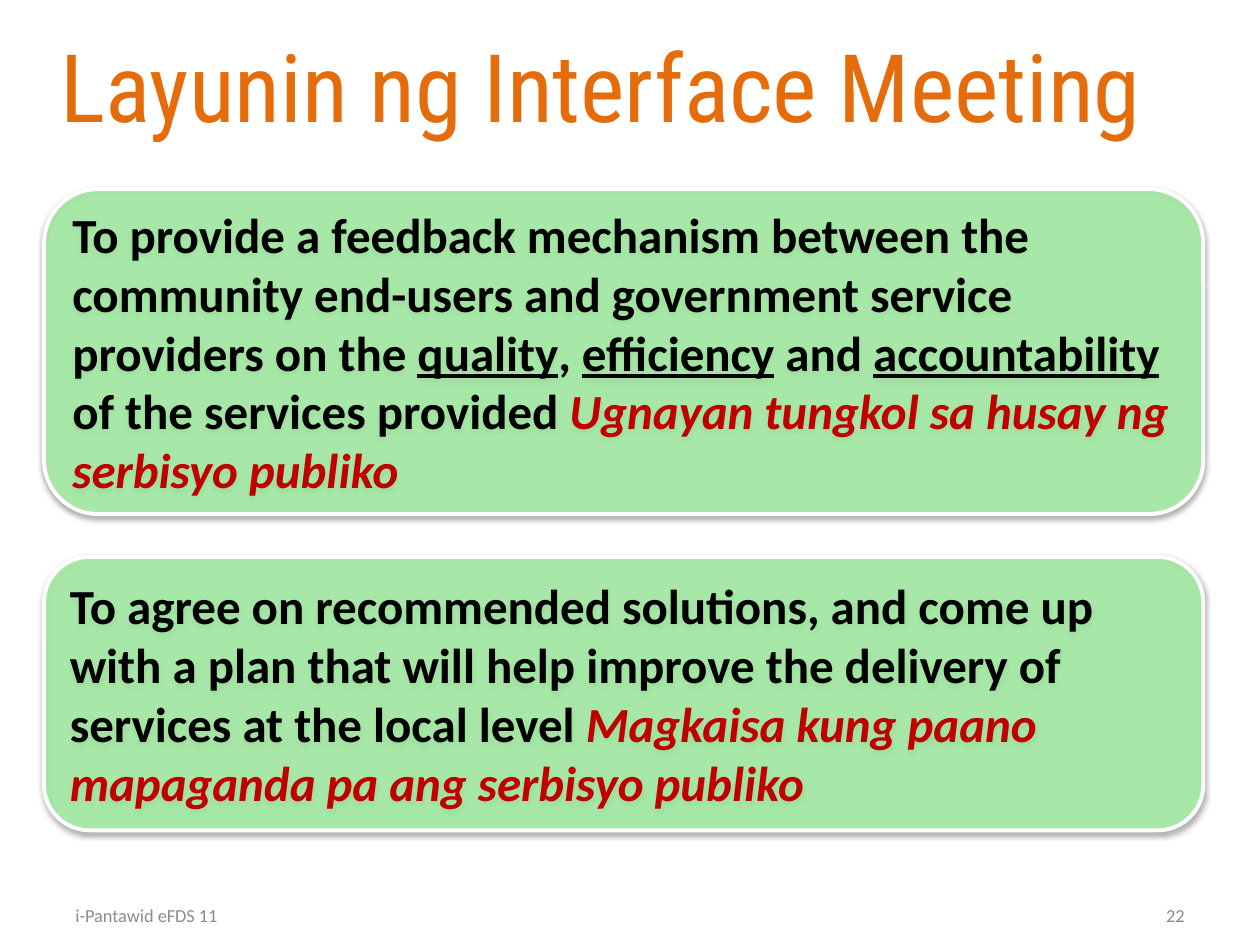
import pptx
import pptx.dml.color
import pptx.enum.shapes
import pptx.enum.text
import pptx.oxml
import pptx.oxml.ns
import pptx.util
from pptx.util import Inches

TITLE = "Layunin ng Interface Meeting"
GOALS = [
    (1.5, 2.58, [
        ("To provide a feedback mechanism between the community end-users "
         "and government service providers on the ", "plain"),
        ("quality", "key"),
        (", ", "plain"),
        ("efficiency", "key"),
        (" and ", "plain"),
        ("accountability", "key"),
        (" of the services provided ", "plain"),
        ("Ugnayan tungkol sa husay ng serbisyo publiko", "local"),
    ]),
    (4.42, 2.17, [
        ("To agree on recommended solutions, and come up with a plan that will "
         "help improve the delivery of services at the local level ", "plain"),
        ("Magkaisa kung paano mapaganda pa ang serbisyo publiko", "local"),
    ]),
]
FOOTERS = [(7.17, "22", "RIGHT"), (0.5, "i-Pantawid eFDS 11", "LEFT")]

BODY = {"name": "Calibri", "size": 28, "bold": True, "color": "000000"}
THEME = {
    "title": {"name": "Roboto Condensed", "size": 54, "color": "E46C0A"},
    "plain": BODY,
    "key": {**BODY, "underline": True},
    "local": {**BODY, "italic": True, "color": "C00000"},
    "footer": {"name": "Calibri", "size": 10.5, "color": "8C8C8C"},
    "box": "99FF99",
    "box_alpha": 63,
    "edge": "FFFFFF",
    "edge_width": 2.25,
    "title_edge": 1.45,
    "shadow": {"color": "000000", "alpha": 38, "blur": 3.1, "dist": 1.6},
}
NS = pptx.oxml.ns.nsdecls("a")
ANCHOR = pptx.enum.text.MSO_ANCHOR
ALIGN = pptx.enum.text.PP_ALIGN


def rgb(value):
    return pptx.dml.color.RGBColor.from_string(value)


def add_run(p, text, style):
    r = p.add_run()
    r.text = text
    for key, value in THEME[style].items():
        if key == "color":
            r.font.color.rgb = rgb(value)
        else:
            setattr(r.font, key, pptx.util.Pt(value) if key == "size" else value)
    return r


def add_text(s, box, text, style, align="LEFT", **frame):
    tf = s.shapes.add_textbox(*map(Inches, box)).text_frame
    for key, value in frame.items():
        setattr(tf, key, value)
    p = tf.paragraphs[0]
    p.alignment = ALIGN[align]
    return add_run(p, text, style)


def add_goal(s, top, height, runs):
    sp = s.shapes.add_shape(
        pptx.enum.shapes.MSO_SHAPE.ROUNDED_RECTANGLE,
        *map(Inches, (0.35, top, 9.2, height)))
    sp.fill.solid()
    sp.fill.fore_color.rgb = rgb(THEME["box"])
    color = sp._element.spPr.find(".//" + pptx.oxml.ns.qn("a:srgbClr"))
    color.append(pptx.oxml.parse_xml(
        f'<a:alpha {NS} val="{THEME["box_alpha"] * 1000}"/>'))
    sp.line.color.rgb = rgb(THEME["edge"])
    sp.line.width = pptx.util.Pt(THEME["edge_width"])
    sp.shadow.inherit = False
    shade = THEME["shadow"]
    effects = sp._element.spPr.find(pptx.oxml.ns.qn("a:effectLst"))
    effects.append(pptx.oxml.parse_xml(
        f'<a:outerShdw {NS} blurRad="{pptx.util.Pt(shade["blur"])}" '
        f'dist="{pptx.util.Pt(shade["dist"])}" dir="5400000" rotWithShape="0">'
        f'<a:srgbClr val="{shade["color"]}">'
        f'<a:alpha val="{shade["alpha"] * 1000}"/></a:srgbClr></a:outerShdw>'))
    tf = sp.text_frame
    tf.word_wrap = True
    tf.vertical_anchor = ANCHOR.MIDDLE
    p = tf.paragraphs[0]
    p.alignment = ALIGN.LEFT
    for text, style in runs:
        add_run(p, text, style)


def main():
    prs = pptx.Presentation()
    prs.slide_width, prs.slide_height = Inches(10), Inches(7.5)
    s = prs.slides.add_slide(prs.slide_layouts[6])
    r = add_text(s, (0.38, 0.17, 9.22, 1.01), TITLE, "title", word_wrap=False,
                 auto_size=pptx.enum.text.MSO_AUTO_SIZE.SHAPE_TO_FIT_TEXT)
    r.font._element.insert(0, pptx.oxml.parse_xml(
        f'<a:ln {NS} w="{pptx.util.Pt(THEME["title_edge"])}"><a:solidFill>'
        f'<a:srgbClr val="{THEME["edge"]}"/></a:solidFill></a:ln>'))
    for goal in GOALS:
        add_goal(s, *goal)
    for left, text, align in FOOTERS:
        add_text(s, (left, 7.17, 2.33, 0.18), text, "footer", align,
                 word_wrap=True, vertical_anchor=ANCHOR.MIDDLE)
    prs.save("out.pptx")


if __name__ == "__main__":
    main()
